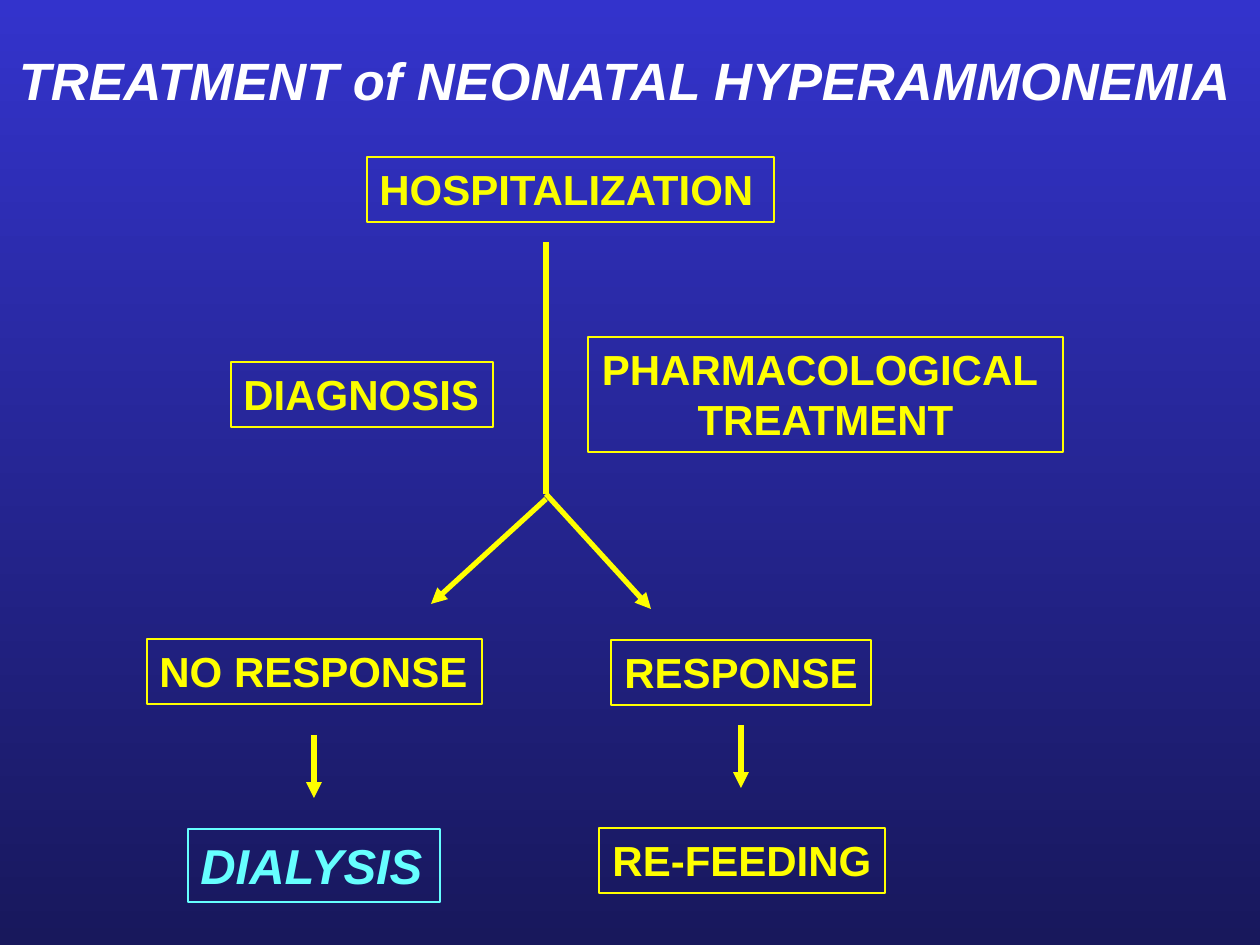
"""Build the slide on treating neonatal hyperammonemia."""
from lxml import etree
from pptx import Presentation, util as u
from pptx.dml.color import RGBColor
from pptx.enum import shapes, text
from pptx.oxml import ns

THEME = {
    "font": "Arial", "title": 30, "body": 24, "big": 28, "thin": 0.75, "edge": 1, "thick": 3,
    "white": "FFFFFF", "yellow": "FFFF00", "lemon": "FAFD00", "cyan": "66FFFF",
    "top": "3333CC", "base": "18185C",
}
TITLE = ("TREATMENT of NEONATAL HYPERAMMONEMIA", (0, 42, 1250, 76))
LEFT, MID = text.PP_ALIGN.LEFT, text.PP_ALIGN.CENTER
PLAIN = ("yellow", "yellow", "thin", "body")
EARLY = ("lemon", "yellow", "edge", "body")
FINAL = ("cyan", "cyan", "thin", "big")
BOXES = [
    ("HOSPITALIZATION ", (367, 157, 407, 65), LEFT, EARLY),
    ("DIAGNOSIS", (231, 362, 262, 65), LEFT, EARLY),
    ("PHARMACOLOGICAL \nTREATMENT", (588, 337, 475, 115), MID, PLAIN),
    ("NO RESPONSE", (147, 639, 335, 65), LEFT, PLAIN),
    ("DIALYSIS", (188, 829, 252, 73), LEFT, FINAL),
    ("RESPONSE", (611, 640, 260, 65), MID, PLAIN),
    ("RE-FEEDING", (599, 828, 286, 65), MID, PLAIN),
]
LINES = [
    ((546, 242, 546, 494), False),
    ((546, 499, 431, 604), True),
    ((546, 494, 651, 609), True),
    ((314, 735, 314, 798), True),
    ((741, 725, 741, 788), True),
]
SCALE = 914400 / 126


def px(nums):
    return [round(n * SCALE) for n in nums]


def color(name):
    return RGBColor.from_string(THEME[name])


def write(shape, words, align, tint, size, slant=False):
    frame = shape.text_frame
    frame.text = words
    frame.word_wrap = False
    frame.vertical_anchor = text.MSO_ANCHOR.TOP
    for para in frame.paragraphs:
        para.alignment = align
        font = para.font
        font.name, font.size = THEME["font"], u.Pt(THEME[size])
        font.bold, font.italic = True, slant
        font.color.rgb = color(tint)


def add_box(slide, words, area, align, style):
    tint, edge, width, size = style
    box = slide.shapes.add_shape(shapes.MSO_SHAPE.RECTANGLE, *px(area))
    box.shadow.inherit = False
    box.fill.background()
    box.line.color.rgb = color(edge)
    box.line.width = u.Pt(THEME[width])
    write(box, words, align, tint, size, size == "big")


def add_line(slide, ends, arrow):
    line = slide.shapes.add_connector(shapes.MSO_CONNECTOR.STRAIGHT, *px(ends))
    line.line.color.rgb = color("yellow")
    line.line.width = u.Pt(THEME["thick"])
    if arrow:
        etree.SubElement(line.line._get_or_add_ln(), ns.qn("a:tailEnd"), type="triangle")
    etree.SubElement(line._element.spPr, ns.qn("a:effectLst"))


def main():
    deck = Presentation()
    deck.slide_width, deck.slide_height = px((1260, 945))
    slide = deck.slides.add_slide(deck.slide_layouts[5])
    fill = slide.background.fill
    fill.gradient()
    fill.gradient_angle = 270
    for stop, name, spot in zip(fill.gradient_stops, ("top", "base"), (0, 1)):
        stop.color.rgb, stop.position = color(name), spot
    words, area = TITLE
    title = slide.shapes.title
    title.left, title.top, title.width, title.height = px(area)
    write(title, words, MID, "white", "title", True)
    for box in BOXES:
        add_box(slide, *box)
    for line in LINES:
        add_line(slide, *line)
    deck.save("out.pptx")


if __name__ == "__main__":
    main()
